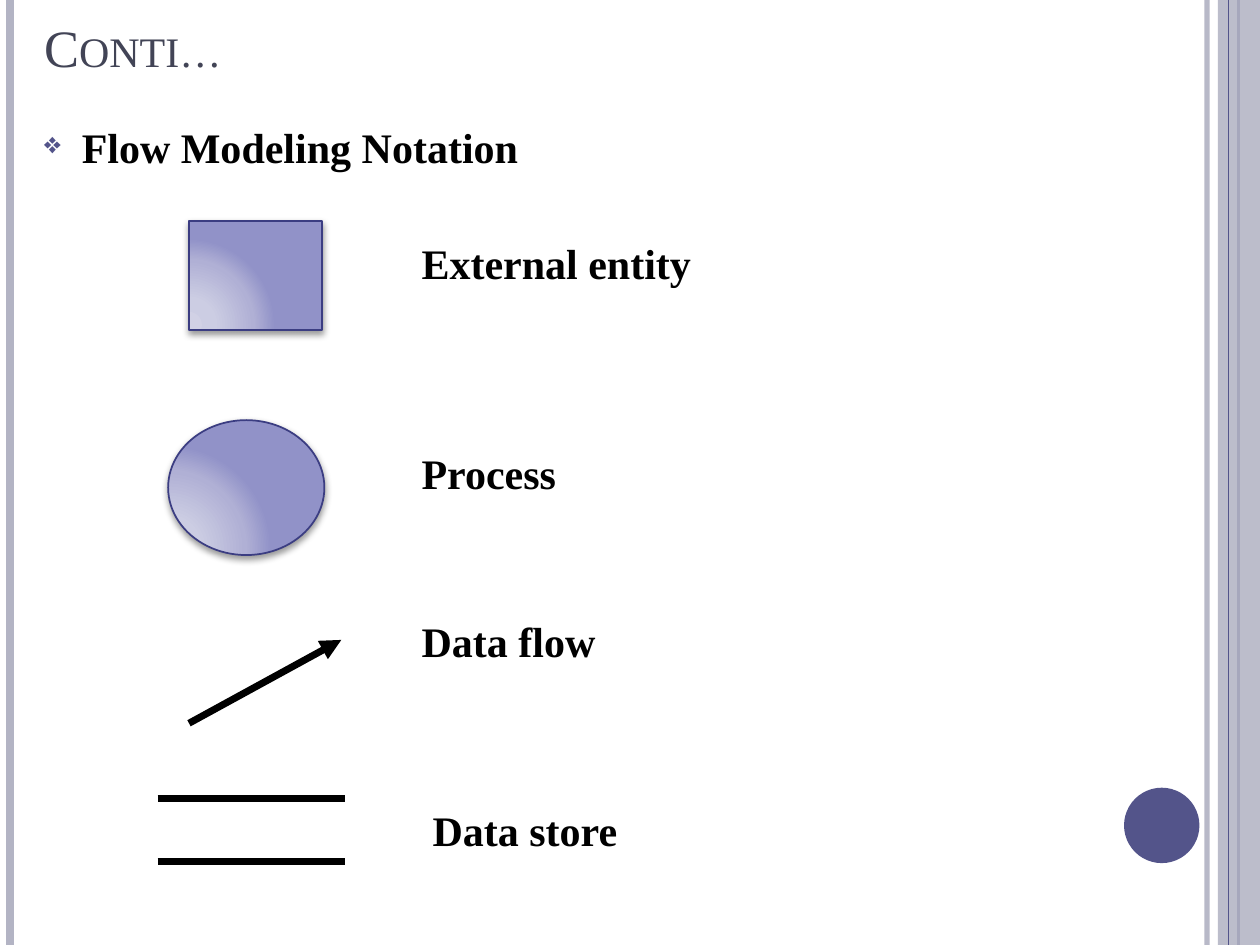
from dataclasses import dataclass
from typing import NamedTuple, Optional

from lxml import etree
from pptx import Presentation
from pptx import util as u
from pptx.dml.color import RGBColor
from pptx.enum import shapes, text
from pptx.oxml.ns import qn

Cm = u.Cm


@dataclass(frozen=True)
class Theme:
    font: str = "Times New Roman"
    title_size: int = 30
    body_size: int = 24
    title: str = "424456"
    ink: str = "000000"
    accent: str = "53548A"
    stripe: str = "B3B4C4"
    outline: str = "3B3D82"
    gradient: tuple = ((0, "D1D1E5"), (30, "CCCDE3"), (75, "B0B0D5"), (100, "9192C8"))


class Stroke(NamedTuple):
    start: tuple[float, float]
    end: tuple[float, float]
    color: str
    weight: float
    alpha: int = 100
    arrow: bool = False


class Symbol(NamedTuple):
    kind: shapes.MSO_SHAPE
    frame: tuple[float, float, float, float]


class Label(NamedTuple):
    words: str
    left: float
    top: float


THEME = Theme()
WIDTH, HEIGHT = 25.4, 19.05


def edge(x: float, color: str, weight: float, alpha: int = 100) -> Stroke:
    """A rule running down the full height of the page."""
    return Stroke((x, 0), (x, HEIGHT), color, weight, alpha)


EDGES_BEHIND = [
    edge(24.33, THEME.stripe, 3, 93),
    edge(0.21, THEME.stripe, 4.5),
    edge(24.97, THEME.accent, 1.5),
]
EDGE_FRONT = edge(24.77, THEME.accent, 0.75)
SYMBOLS = [
    Symbol(shapes.MSO_SHAPE.RECTANGLE, (3.81, 4.45, 2.69, 2.21)),
    Symbol(shapes.MSO_SHAPE.OVAL, (3.39, 8.47, 3.15, 2.72)),
]
NOTATION_LINES = [
    Stroke((3.81, 14.58), (6.88, 12.9), THEME.ink, 4, arrow=True),
    *(Stroke((3.18, y), (6.96, y), THEME.ink, 4) for y in (16.09, 17.36)),
]
LABELS = [
    Label("External entity", 8.25, 4.66),
    Label("Process", 8.25, 8.89),
    Label("Data flow", 8.25, 12.28),
    Label("Data store", 8.47, 16.09),
]


def child(parent, tag: str, **attributes):
    return etree.SubElement(parent, qn(tag), {k: str(v) for k, v in attributes.items()})


def set_alpha(properties, percent: int) -> None:
    for color in properties.iter(qn("a:srgbClr")):
        child(color, "a:alpha", val=percent * 1000)


def draw_stroke(page, stroke: Stroke) -> None:
    ends = (Cm(v) for v in (*stroke.start, *stroke.end))
    line = page.shapes.add_connector(shapes.MSO_CONNECTOR.STRAIGHT, *ends)
    line.line.color.rgb = RGBColor.from_string(stroke.color)
    line.line.width = u.Pt(stroke.weight)
    properties = line._element.spPr
    if stroke.alpha < 100:
        set_alpha(properties, stroke.alpha)
    if stroke.arrow:
        child(properties.find(qn("a:ln")), "a:tailEnd", type="triangle")
    child(properties, "a:effectLst")


def draw_plain(page, kind, frame, color: str, alpha: int = 100) -> None:
    shape = page.shapes.add_shape(kind, *map(Cm, frame))
    shape.fill.solid()
    shape.fill.fore_color.rgb = RGBColor.from_string(color)
    if alpha < 100:
        set_alpha(shape._element.spPr, alpha)
    shape.line.fill.background()
    shape.shadow.inherit = False


def draw_symbol(page, symbol: Symbol) -> None:
    """A notation shape with a corner glow and a soft shadow below."""
    shape = page.shapes.add_shape(symbol.kind, *map(Cm, symbol.frame))
    properties = shape._element.spPr
    gradient = child(properties, "a:gradFill", rotWithShape=1)
    stops = child(gradient, "a:gsLst")
    for position, color in THEME.gradient:
        child(child(stops, "a:gs", pos=position * 1000), "a:srgbClr", val=color)
    glow = child(gradient, "a:path", path="circle")
    child(glow, "a:fillToRect", l=5000, t=100000, r=120000, b=10000)
    shape.line.color.rgb = RGBColor.from_string(THEME.outline)
    shape.line.width = u.Pt(1)
    shape.shadow.inherit = False
    shadow = child(properties.find(qn("a:effectLst")), "a:outerShdw",
                   blurRad=u.Pt(4), dist=u.Pt(2), dir=90 * 60000, rotWithShape=0)
    child(child(shadow, "a:srgbClr", val=THEME.ink), "a:alpha", val=40000)


def add_text(page, words: str, frame, *, size: int = THEME.body_size,
             color: str = THEME.ink, bold: bool = True, small_caps: bool = False,
             anchor=text.MSO_ANCHOR.TOP, bullet: Optional[str] = None) -> None:
    box = page.shapes.add_textbox(*map(Cm, frame))
    box.text_frame.word_wrap = True
    box.text_frame.vertical_anchor = anchor
    para = box.text_frame.paragraphs[0]
    span = para.add_run()
    span.text = words
    span.font.name = THEME.font
    span.font.size = u.Pt(size)
    span.font.bold = bold
    span.font.color.rgb = RGBColor.from_string(color)
    if small_caps:
        span.font._element.set("cap", "small")
    if bullet:
        para.space_before = u.Pt(6)
        properties = para._p.get_or_add_pPr()
        properties.set("marL", str(Cm(0.76)))
        properties.set("indent", str(-Cm(0.76)))
        child(child(properties, "a:buClr"), "a:srgbClr", val=THEME.accent)
        child(properties, "a:buSzPct", val=70000)
        child(properties, "a:buChar", char=bullet)


def draw_backdrop(page) -> None:
    for stroke in EDGES_BEHIND:
        draw_stroke(page, stroke)
    draw_plain(page, shapes.MSO_SHAPE.RECTANGLE, (24.55, 0, 0.85, HEIGHT), THEME.stripe, 87)
    draw_stroke(page, EDGE_FRONT)
    draw_plain(page, shapes.MSO_SHAPE.OVAL, (22.66, 15.88, 1.52, 1.52), THEME.accent)


def main() -> None:
    deck = Presentation()
    deck.slide_width, deck.slide_height = Cm(WIDTH), Cm(HEIGHT)
    page = deck.slides.add_slide(deck.slide_layouts[6])
    draw_backdrop(page)
    add_text(page, "Conti…", (0.64, 0, 22.66, 1.7), size=THEME.title_size,
             color=THEME.title, bold=False, small_caps=True,
             anchor=text.MSO_ANCHOR.BOTTOM)
    add_text(page, "Flow Modeling Notation", (0.64, 2.33, 22.02, 16.72), bullet="❖")
    for symbol in SYMBOLS:
        draw_symbol(page, symbol)
    for stroke in NOTATION_LINES:
        draw_stroke(page, stroke)
    for label in LABELS:
        add_text(page, label.words, (label.left, label.top, 6.4, 1.28))
    deck.save("out.pptx")


if __name__ == "__main__":
    main()
